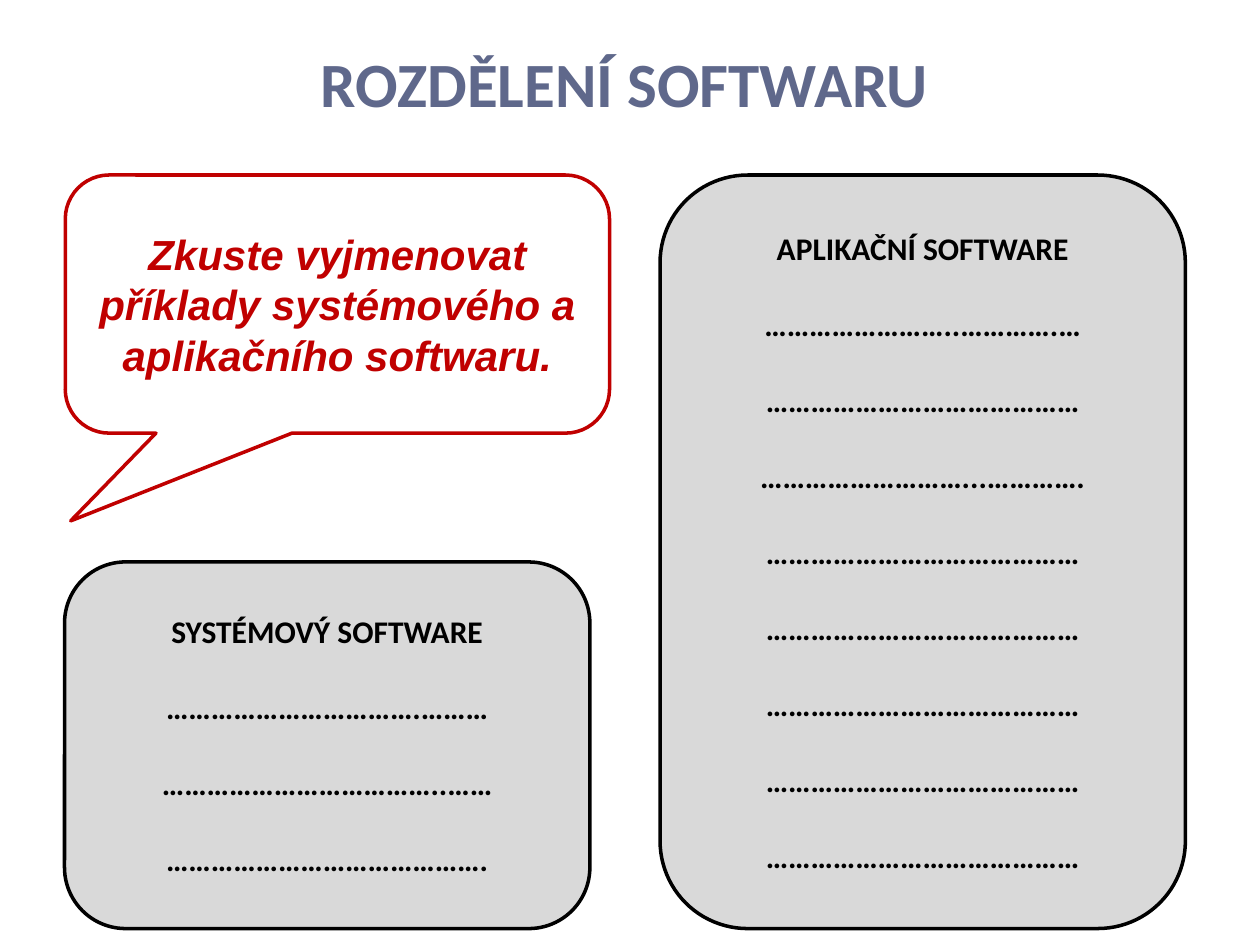
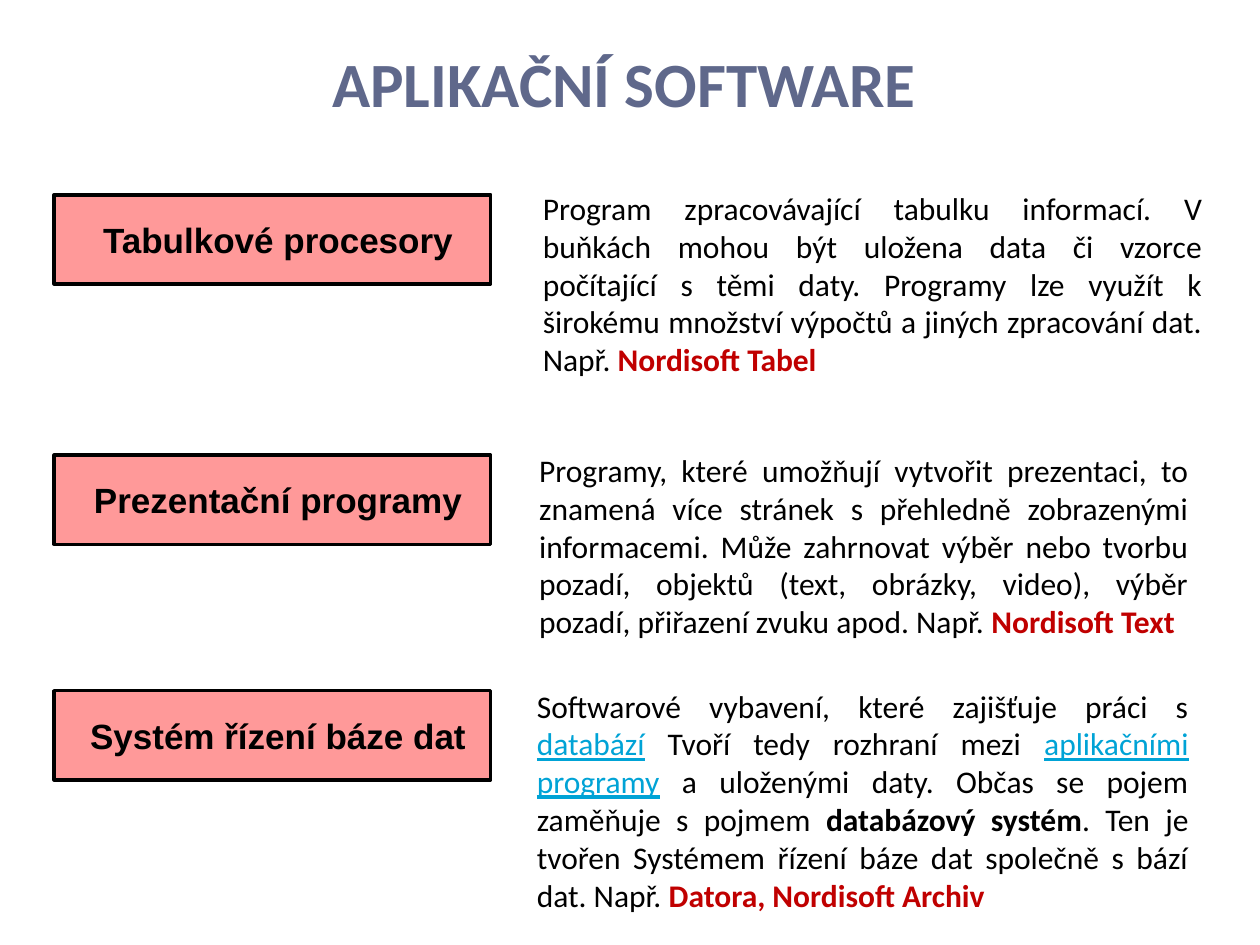
from dataclasses import dataclass, field
from typing import Any

from pptx import Presentation
from pptx.dml.color import RGBColor
from pptx.enum.shapes import MSO_SHAPE
from pptx.enum.text import MSO_ANCHOR, PP_ALIGN
from pptx.util import Pt

BLACK = RGBColor(0x00, 0x00, 0x00)
WHITE = RGBColor(0xFF, 0xFF, 0xFF)
RED = RGBColor(0xC0, 0x00, 0x00)
GREY = RGBColor(0xD9, 0xD9, 0xD9)
PINK = RGBColor(0xFF, 0x99, 0x99)
SLATE = RGBColor(0x5F, 0x68, 0x8B)
LINK_BLUE = RGBColor(0x00, 0xA3, 0xD6)

TITLE = {"name": "Calibri", "size": Pt(36), "bold": True, "color": SLATE}
BODY = {"name": "Calibri", "size": Pt(18), "color": BLACK}
STRONG = BODY | {"bold": True}
EXAMPLE = STRONG | {"color": RED}
TERM = BODY | {"color": LINK_BLUE, "underline": True}
LABEL = {"name": "Arial", "size": Pt(20), "bold": True, "color": BLACK}
PROMPT = {"name": "Arial", "size": Pt(24), "bold": True, "italic": True, "color": RED}

Format = dict[str, Any]
Spans = list[tuple[str, Format]]


@dataclass(frozen=True)
class Frame:
    left: float
    top: float
    width: float
    height: float

    def lengths(self) -> list[Pt]:
        return [Pt(value) for value in (self.left, self.top, self.width, self.height)]


@dataclass(frozen=True)
class Panel:
    kind: MSO_SHAPE
    frame: Frame
    fill: RGBColor
    line: RGBColor
    lines: list[str]
    style: Format
    line_gap: float = 0
    indent: float = 0
    adjustments: list[float] = field(default_factory=list)


@dataclass(frozen=True)
class Topic:
    label: str
    label_top: float
    frame: Frame
    spans: Spans


DOTS = "……………………………………"

PANELS = [
    Panel(
        MSO_SHAPE.ROUNDED_RECTANGLE, Frame(36.9, 321.1, 300.2, 209.5), GREY, BLACK,
        ["SYSTÉMOVÝ SOFTWARE", "…………………………….………",
         "………………………………..……", "……………………………………."],
        STRONG, line_gap=21.8,
    ),
    Panel(
        MSO_SHAPE.ROUNDED_RECTANGLE, Frame(377.2, 100, 300.2, 430.6), GREY, BLACK,
        ["APLIKAČNÍ SOFTWARE", "……………………..………….…", DOTS,
         "………………………...………….", *[DOTS] * 5],
        STRONG, line_gap=21.8,
    ),
    Panel(
        MSO_SHAPE.ROUNDED_RECTANGULAR_CALLOUT, Frame(37.3, 100, 311, 147.5), WHITE, RED,
        ["Zkuste vyjmenovat příklady systémového a aplikačního softwaru."],
        PROMPT, adjustments=[-0.49, 0.84, 0.17],
    ),
]

TOPICS = [
    Topic("Tabulkové procesory", 111.3, Frame(303.1, 104.4, 391, 116.6), [
        ("Program zpracovávající tabulku informací. V buňkách mohou být uložena data "
         "či vzorce počítající s těmi daty. Programy lze využít k širokému množství "
         "výpočtů a jiných zpracování dat. Např. ", BODY),
        ("Nordisoft Tabel", EXAMPLE),
    ]),
    Topic("Prezentační programy", 260.1, Frame(301, 254.2, 385.2, 116.6), [
        ("Programy, které umožňují vytvořit prezentaci, to znamená více stránek "
         "s přehledně zobrazenými informacemi. Může zahrnovat výběr nebo tvorbu pozadí, "
         "objektů (text, obrázky, video), výběr pozadí, přiřazení zvuku apod. Např. ", BODY),
        ("Nordisoft Text", EXAMPLE),
    ]),
    Topic("Systém řízení báze dat", 394.7, Frame(299.7, 388.8, 386.6, 138.2), [
        ("Softwarové vybavení, které zajišťuje práci s ", BODY),
        ("databází", TERM),
        (" Tvoří tedy rozhraní mezi ", BODY),
        ("aplikačními programy", TERM),
        (" a uloženými daty. Občas se pojem zaměňuje s pojmem ", BODY),
        ("databázový systém", STRONG),
        (". Ten je tvořen Systémem řízení báze dat společně s bází dat. Např. ", BODY),
        ("Datora, Nordisoft Archiv", EXAMPLE),
    ]),
]


def write_spans(para, spans: Spans) -> None:
    for text, style in spans:
        span = para.add_run()
        span.text = text
        for name, value in style.items():
            if name == "color":
                span.font.color.rgb = value
            else:
                setattr(span.font, name, value)


def add_text(page, frame: Frame, spans: Spans, alignment: PP_ALIGN):
    box = page.shapes.add_textbox(*frame.lengths())
    box.text_frame.word_wrap = True
    para = box.text_frame.paragraphs[0]
    para.alignment = alignment
    write_spans(para, spans)
    return box


def add_panel(page, panel: Panel) -> None:
    shape = page.shapes.add_shape(panel.kind, *panel.frame.lengths())
    shape.shadow.inherit = False
    for index, value in enumerate(panel.adjustments):
        shape.adjustments[index] = value
    shape.fill.solid()
    shape.fill.fore_color.rgb = panel.fill
    shape.line.color.rgb = panel.line
    shape.line.width = Pt(2)
    frame = shape.text_frame
    frame.word_wrap = True
    frame.vertical_anchor = MSO_ANCHOR.MIDDLE
    for index, text in enumerate(panel.lines):
        para = frame.add_paragraph() if index else frame.paragraphs[0]
        para.alignment = PP_ALIGN.CENTER
        para.space_before = Pt(panel.line_gap if index else 0)
        if panel.indent:
            para._p.get_or_add_pPr().set("marL", str(Pt(panel.indent)))
        write_spans(para, [(text, panel.style)])


def add_topic(page, topic: Topic) -> None:
    add_panel(page, Panel(
        MSO_SHAPE.RECTANGLE, Frame(31, topic.label_top, 249.4, 51), PINK, BLACK,
        [topic.label], LABEL, indent=6.5,
    ))
    add_text(page, topic.frame, topic.spans, PP_ALIGN.JUSTIFY)


def add_page(deck, title: str):
    page = deck.slides.add_slide(deck.slide_layouts[6])
    box = add_text(page, Frame(25.2, 23, 663.1, 49), [(title, TITLE)], PP_ALIGN.CENTER)
    box.text_frame.vertical_anchor = MSO_ANCHOR.BOTTOM
    box.text_frame.paragraphs[0].line_spacing = Pt(20)
    return page


def main() -> None:
    deck = Presentation()
    deck.slide_width, deck.slide_height = Pt(720), Pt(540)
    division = add_page(deck, "ROZDĚLENÍ SOFTWARU")
    for panel in PANELS:
        add_panel(division, panel)
    applications = add_page(deck, "APLIKAČNÍ SOFTWARE")
    for topic in TOPICS:
        add_topic(applications, topic)
    deck.save("out.pptx")


if __name__ == "__main__":
    main()
